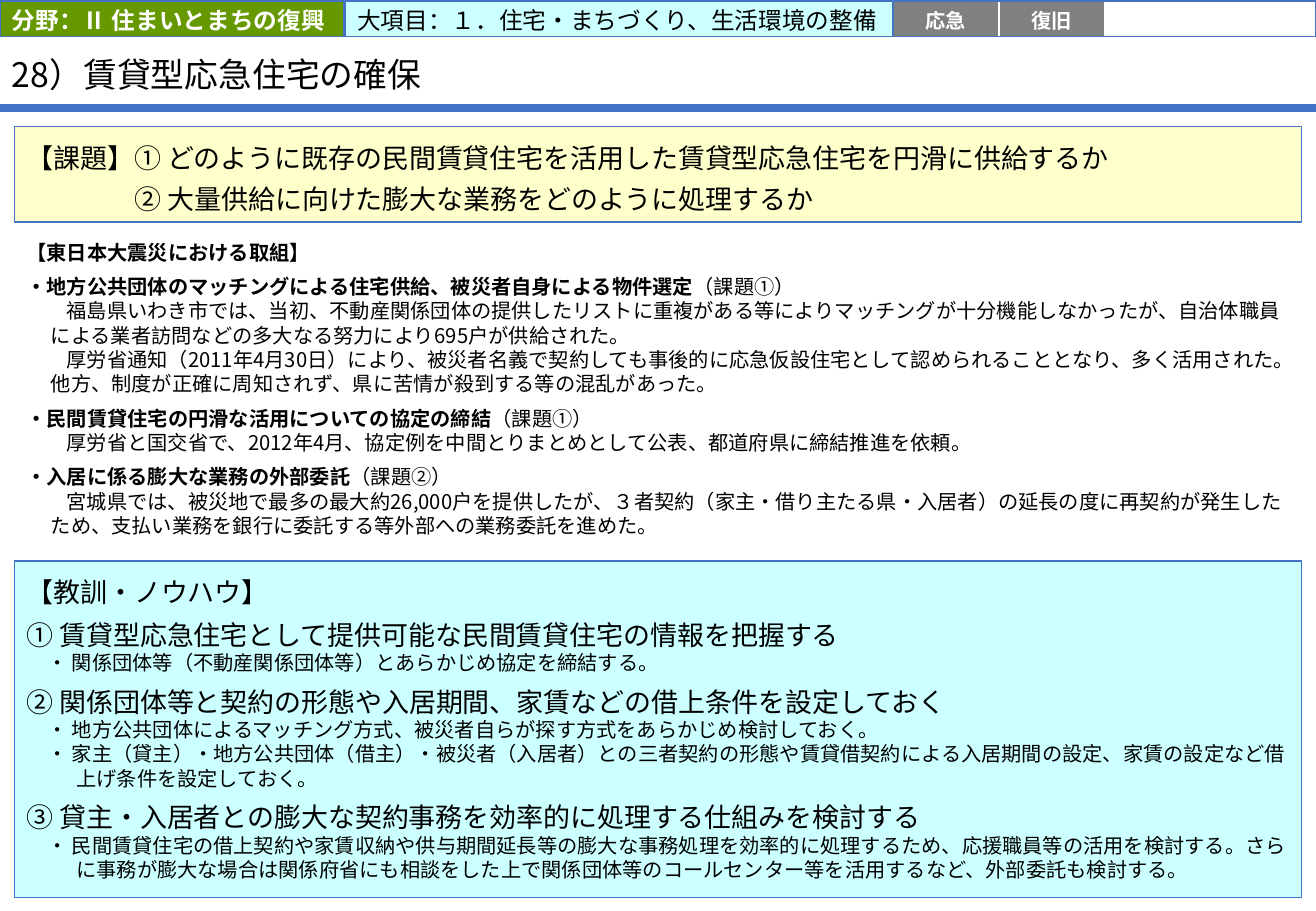
from pptx import Presentation
from pptx.dml.color import RGBColor
from pptx.enum.shapes import MSO_CONNECTOR as Connector, MSO_SHAPE as Shape
from pptx.enum.text import MSO_ANCHOR as Anchor, PP_ALIGN as Align
from pptx.oxml.ns import qn
from pptx.util import Inches, Pt
from lxml.etree import SubElement

SANS, JAPANESE = "Calibri", "Noto Sans CJK JP"
BLUE, WHITE, BLACK, GREY = "4472C4", "FFFFFF", "000000", "808080"
GREEN, CYAN, YELLOW = "669900", "CCFFFF", "FFFFCC"
SLIDE_WIDTH = 10.83
PANEL_LEFT, PANEL_WIDTH = 0.12, 10.59
HEADER_TOP, HEADER_HEIGHT = 0.01, 0.29
HEADER_INSETS = (0.1, 0.02, 0.1, 0)
BODY_INDENT = {"margin": 0.2, "indent": 0.13}
ITEM_INDENT = {"margin": 0.41, "indent": -0.24}


def color(value):
    return RGBColor.from_string(value)


def set_attributes(target, values):
    for name, value in values.items():
        setattr(target, name, value)


def add_run(paragraph, text, size, font=JAPANESE, fill=BLACK, bold=False):
    run = paragraph.add_run()
    run.text = text
    set_attributes(run.font, {"size": Pt(size), "name": font, "bold": bold})
    run.font.color.rgb = color(fill)
    if font == JAPANESE:
        SubElement(run.font._element, qn("a:ea")).set("typeface", font)


def add_paragraph(frame, runs, margin=0, indent=0, **values):
    """Fill the empty first paragraph, or append one; runs are dicts for add_run."""
    paragraph = frame.paragraphs[0]
    if paragraph.runs:
        paragraph = frame.add_paragraph()
    set_attributes(paragraph, {"alignment": Align.LEFT, **values})
    properties = paragraph._p.get_or_add_pPr()
    properties.set("marL", str(Inches(margin)))
    properties.set("indent", str(Inches(indent)))
    for run in runs:
        add_run(paragraph, **run)


def format_frame(frame, insets, anchor):
    left, top, right, bottom = (Inches(inset) for inset in insets)
    set_attributes(frame, {
        "word_wrap": True, "vertical_anchor": anchor,
        "margin_left": left, "margin_top": top,
        "margin_right": right, "margin_bottom": bottom,
    })
    return frame


def add_box(slide, place, fill=None, line=BLUE, insets=(0.1, 0.05, 0.1, 0.05),
            anchor=Anchor.MIDDLE):
    """Draw a rectangle and return its text frame."""
    shape = slide.shapes.add_shape(Shape.RECTANGLE, *(Inches(value) for value in place))
    shape.shadow.inherit = False
    if fill:
        shape.fill.solid()
        shape.fill.fore_color.rgb = color(fill)
    else:
        shape.fill.background()
    if line:
        shape.line.color.rgb = color(line)
        shape.line.width = Pt(1)
    else:
        shape.line.fill.background()
    return format_frame(shape.text_frame, insets, anchor)


def add_rule(slide, top):
    rule = slide.shapes.add_connector(
        Connector.STRAIGHT, 0, Inches(top), Inches(SLIDE_WIDTH), Inches(top))
    rule.line.color.rgb = color(BLUE)
    rule.line.width = Pt(4.5)
    SubElement(rule._element.spPr, qn("a:effectLst"))


def add_title(slide, text):
    place = (Inches(value) for value in (0, 0.32, 9.48, 0.58))
    frame = slide.shapes.add_textbox(*place).text_frame
    format_frame(frame, (0.1, 0.04, 0.1, 0), Anchor.MIDDLE)
    add_paragraph(frame, [{"text": text, "size": 20}], line_spacing=0.9)


def add_header(slide):
    # Field and main category
    for left, width, fill, text, style in (
        (0, 2.83, GREEN, "分野：Ⅱ 住まいとまちの復興", {"fill": WHITE, "bold": True}),
        (2.84, 4.53, CYAN, "大項目：１．住宅・まちづくり、生活環境の整備", {}),
    ):
        frame = add_box(slide, (left, HEADER_TOP, width, HEADER_HEIGHT), fill,
                        insets=HEADER_INSETS)
        add_paragraph(frame, [{"text": text, "size": 14, "font": SANS, **style}])

    # Phase cells inside one outline
    phase_left, phase_width = 7.35, 0.87
    phases = ("応急", "復旧", None, None)
    for index, phase in enumerate(phases):
        place = (phase_left + index * phase_width, HEADER_TOP, phase_width, HEADER_HEIGHT)
        frame = add_box(slide, place, GREY if phase else WHITE, WHITE, (0, 0.02, 0, 0))
        if phase:
            run = {"text": phase, "size": 12, "font": SANS, "fill": WHITE, "bold": True}
            add_paragraph(frame, [run], alignment=Align.CENTER)
    add_box(slide, (phase_left, HEADER_TOP, len(phases) * phase_width, HEADER_HEIGHT))


def add_issues(slide):
    frame = add_box(slide, (PANEL_LEFT, 1.04, PANEL_WIDTH, 0.79), YELLOW,
                    insets=(0.1, 0.12, 0.1, 0.12))
    for text, margin in (
        ("【課題】① どのように既存の民間賃貸住宅を活用した賃貸型応急住宅を円滑に供給するか", 0),
        ("② 大量供給に向けた膨大な業務をどのように処理するか", 0.89),
    ):
        add_paragraph(frame, [{"text": text, "size": 16}], margin, line_spacing=Pt(24))


def add_efforts(slide):
    frame = add_box(slide, (PANEL_LEFT, 1.88, PANEL_WIDTH, 2.64), WHITE, None)
    heading = {"size": 12, "font": SANS, "bold": True}
    add_paragraph(frame, [{"text": "【東日本大震災における取組】", **heading}])
    for title, issue, bodies in (
        ("・地方公共団体のマッチングによる住宅供給、被災者自身による物件選定", "（課題①）", (
            "福島県いわき市では、当初、不動産関係団体の提供したリストに重複がある等によりマッチングが十分機能しなかったが、自治体職員による業者訪問などの多大なる努力により695戸が供給された。",
            "厚労省通知（2011年4月30日）により、被災者名義で契約しても事後的に応急仮設住宅として認められることとなり、多く活用された。他方、制度が正確に周知されず、県に苦情が殺到する等の混乱があった。",
        )),
        ("・民間賃貸住宅の円滑な活用についての協定の締結", "（課題①）", (
            "厚労省と国交省で、2012年4月、協定例を中間とりまとめとして公表、都道府県に締結推進を依頼。",
        )),
        ("・入居に係る膨大な業務の外部委託", "（課題②）", (
            "宮城県では、被災地で最多の最大約26,000戸を提供したが、３者契約（家主・借り主たる県・入居者）の延長の度に再契約が発生したため、支払い業務を銀行に委託する等外部への業務委託を進めた。",
        )),
    ):
        runs = [{"text": title, **heading}, {"text": issue, "size": 12, "font": SANS}]
        add_paragraph(frame, runs, space_before=Pt(6))
        for body in bodies:
            add_paragraph(frame, [{"text": body, "size": 12}], **BODY_INDENT)


def add_lessons(slide):
    frame = add_box(slide, (PANEL_LEFT, 4.62, PANEL_WIDTH, 2.77), CYAN,
                    insets=(0.1, 0.12, 0.1, 0), anchor=Anchor.TOP)
    add_paragraph(frame, [{"text": "【教訓・ノウハウ】", "size": 16}])
    for title, items in (
        ("① 賃貸型応急住宅として提供可能な民間賃貸住宅の情報を把握する", (
            "・ 関係団体等（不動産関係団体等）とあらかじめ協定を締結する。",
        )),
        ("② 関係団体等と契約の形態や入居期間、家賃などの借上条件を設定しておく", (
            "・ 地方公共団体によるマッチング方式、被災者自らが探す方式をあらかじめ検討しておく。",
            "・ 家主（貸主）・地方公共団体（借主）・被災者（入居者）との三者契約の形態や賃貸借契約による入居期間の設定、家賃の設定など借上げ条件を設定しておく。",
        )),
        ("③ 貸主・入居者との膨大な契約事務を効率的に処理する仕組みを検討する", (
            "・ 民間賃貸住宅の借上契約や家賃収納や供与期間延長等の膨大な事務処理を効率的に処理するため、応援職員等の活用を検討する。さらに事務が膨大な場合は関係府省にも相談をした上で関係団体等のコールセンター等を活用するなど、外部委託も検討する。",
        )),
    ):
        add_paragraph(frame, [{"text": title, "size": 16}], space_before=Pt(6))
        for item in items:
            add_paragraph(frame, [{"text": item, "size": 12}], **ITEM_INDENT)


def main():
    presentation = Presentation()
    presentation.slide_width = Inches(SLIDE_WIDTH)
    presentation.slide_height = Inches(7.5)
    slide = presentation.slides.add_slide(presentation.slide_layouts[6])
    add_rule(slide, 0.89)
    add_efforts(slide)
    add_title(slide, "28）賃貸型応急住宅の確保")
    add_header(slide)
    add_issues(slide)
    add_lessons(slide)
    presentation.save("out.pptx")


if __name__ == "__main__":
    main()
